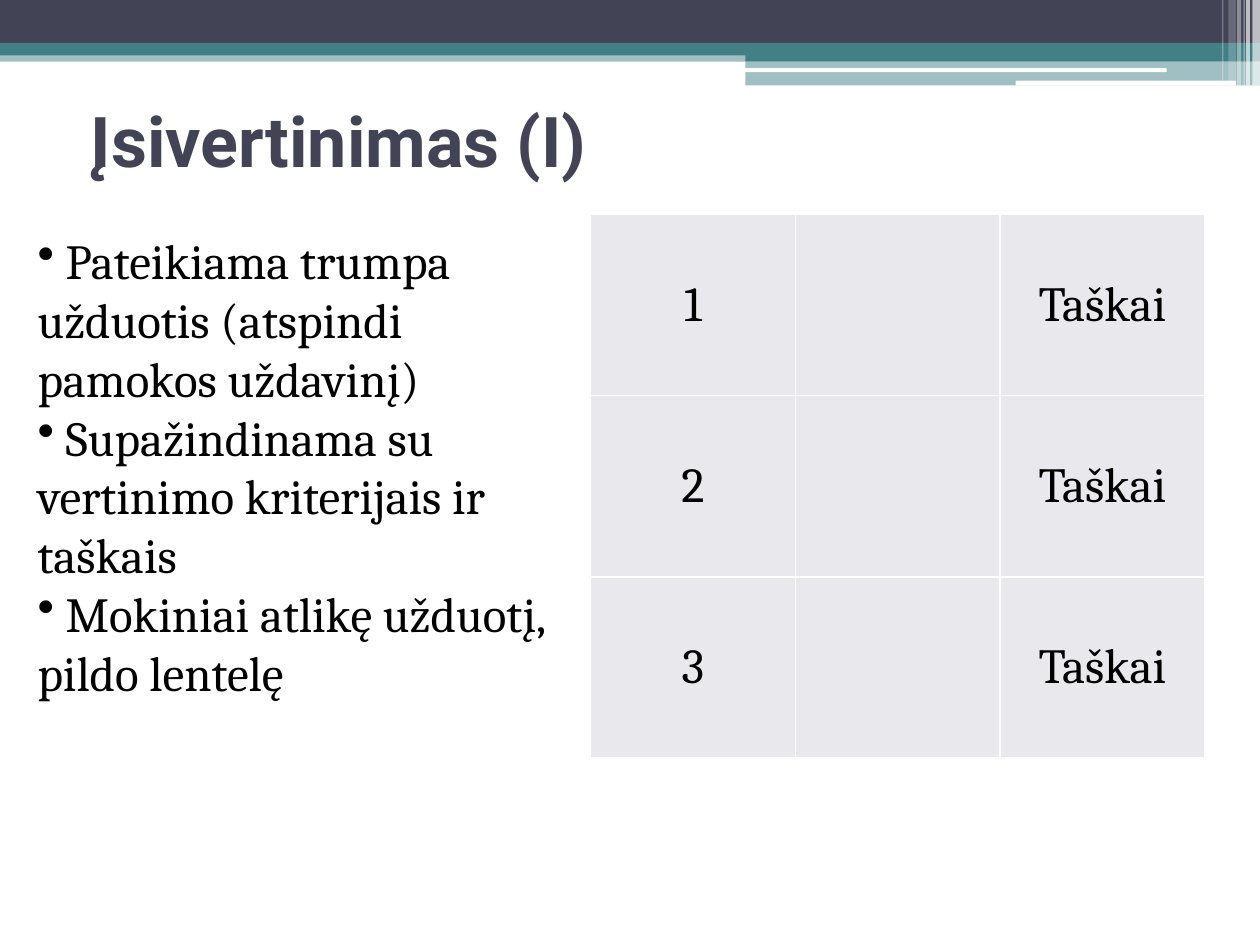
import pptx
import pptx.util
import pptx.dml.color
import pptx.enum.shapes
import pptx.enum.text
import pptx.oxml
import pptx.oxml.ns
import lxml.etree

Pt = pptx.util.Pt
Shape = pptx.enum.shapes.MSO_SHAPE
Align = pptx.enum.text.PP_ALIGN
Anchor = pptx.enum.text.MSO_ANCHOR
qn = pptx.oxml.ns.qn
NAVY, TEAL, WHITE, BLACK, PALE = "424456", "438086", "FFFFFF", "000000", "E9E9ED"


def rgb(code):
    return pptx.dml.color.RGBColor.from_string(code)


def style(font, name, size, code):
    font.name, font.size = name, Pt(size)
    font.color.rgb = rgb(code)


deck = pptx.Presentation()
deck.slide_width, deck.slide_height = Pt(720), Pt(540)
slide = deck.slides.add_slide(deck.slide_layouts[5])

# Header bands and the stripes at the right: kind, box, colour, opacity in percent
rect, pill = Shape.RECTANGLE, Shape.ROUNDED_RECTANGLE
bands = [
    (rect, 0, 28.8, 720, 6.5, TEAL, 50),
    (rect, 0, 0, 720, 24.5, NAVY, 100),
    (rect, 0, 24.5, 720, 7.2, TEAL, 100),
    (rect, 426, 28, 294, 7, TEAL, 100),
    (rect, 426, 34.6, 294, 14.2, TEAL, 50),
    (pill, 425.5, 39, 241.2, 2.2, WHITE, 100),
    (pill, 580.3, 46.1, 126, 2.9, WHITE, 100),
    (rect, 715.7, 0, 4.3, 49, WHITE, 65),
    (rect, 712.1, 0, 2.2, 49, WHITE, 65),
    (rect, 710.6, 0, 0.7, 49, WHITE, 60),
    (rect, 707, 0, 2.2, 49, WHITE, 40),
    (rect, 702, 0, 4.3, 46.1, WHITE, 20),
    (rect, 698.4, 0, 0.7, 46.1, WHITE, 30),
]
for kind, left, top, width, height, code, solid in bands:
    band = slide.shapes.add_shape(kind, Pt(left), Pt(top), Pt(width), Pt(height))
    band.shadow.inherit = False
    band.line.fill.background()
    band.fill.solid()
    band.fill.fore_color.rgb = rgb(code)
    if solid < 100:
        tint = band.fill._xPr.find(".//" + qn("a:srgbClr"))
        lxml.etree.SubElement(tint, qn("a:alpha"), val=str(solid * 1000))

title = slide.shapes.title
title.left, title.top, title.width, title.height = Pt(36), Pt(26), Pt(648), Pt(108)
title.text_frame.text = "Įsivertinimas (I)"
title.text_frame.margin_left = Pt(16)
title.text_frame.vertical_anchor = Anchor.MIDDLE
head = title.text_frame.paragraphs[0]
head.alignment = Align.LEFT
head.font.bold = True
style(head.font, "Roboto", 40, NAVY)

# Score table
size = 3
table = slide.shapes.add_table(
    size, size, Pt(337.5), Pt(122.6), Pt(351), Pt(310.5)).table
table.first_row = table.horz_banding = False
for row in range(size):
    for col, text in enumerate([str(row + 1), "", "Taškai"]):
        cell = table.cell(row, col)
        cell.text = text
        cell.vertical_anchor = Anchor.MIDDLE
        para = cell.text_frame.paragraphs[0]
        para.alignment = Align.CENTER
        style(para.font, "Cambria", 28, BLACK)
        for side in ("lnL", "lnR", "lnT", "lnB"):
            edge = lxml.etree.SubElement(
                cell._tc.get_or_add_tcPr(), qn("a:" + side), w=str(Pt(1)))
            paint = lxml.etree.SubElement(edge, qn("a:solidFill"))
            lxml.etree.SubElement(paint, qn("a:srgbClr"), val=WHITE)
        cell.fill.solid()
        cell.fill.fore_color.rgb = rgb(PALE)

# Steps of the self-assessment
steps = [
    " Pateikiama trumpa užduotis (atspindi pamokos uždavinį)",
    " Supažindinama su vertinimo kriterijais ir taškais",
    " Mokiniai atlikę užduotį, pildo lentelę",
]
box = slide.shapes.add_textbox(Pt(14.4), Pt(128.2), Pt(311.8), Pt(278.6))
frame = box.text_frame
frame.word_wrap = True
frame.text = "\n".join(steps)
for para in frame.paragraphs:
    style(para.font, "Cambria", 28, BLACK)
    props = para._p.get_or_add_pPr()
    dot = pptx.oxml.parse_xml(
        '<a:buChar xmlns:a="http://schemas.openxmlformats.org/drawingml/2006/main" char="•"/>')
    props.insert(0, dot)

deck.save("out.pptx")
